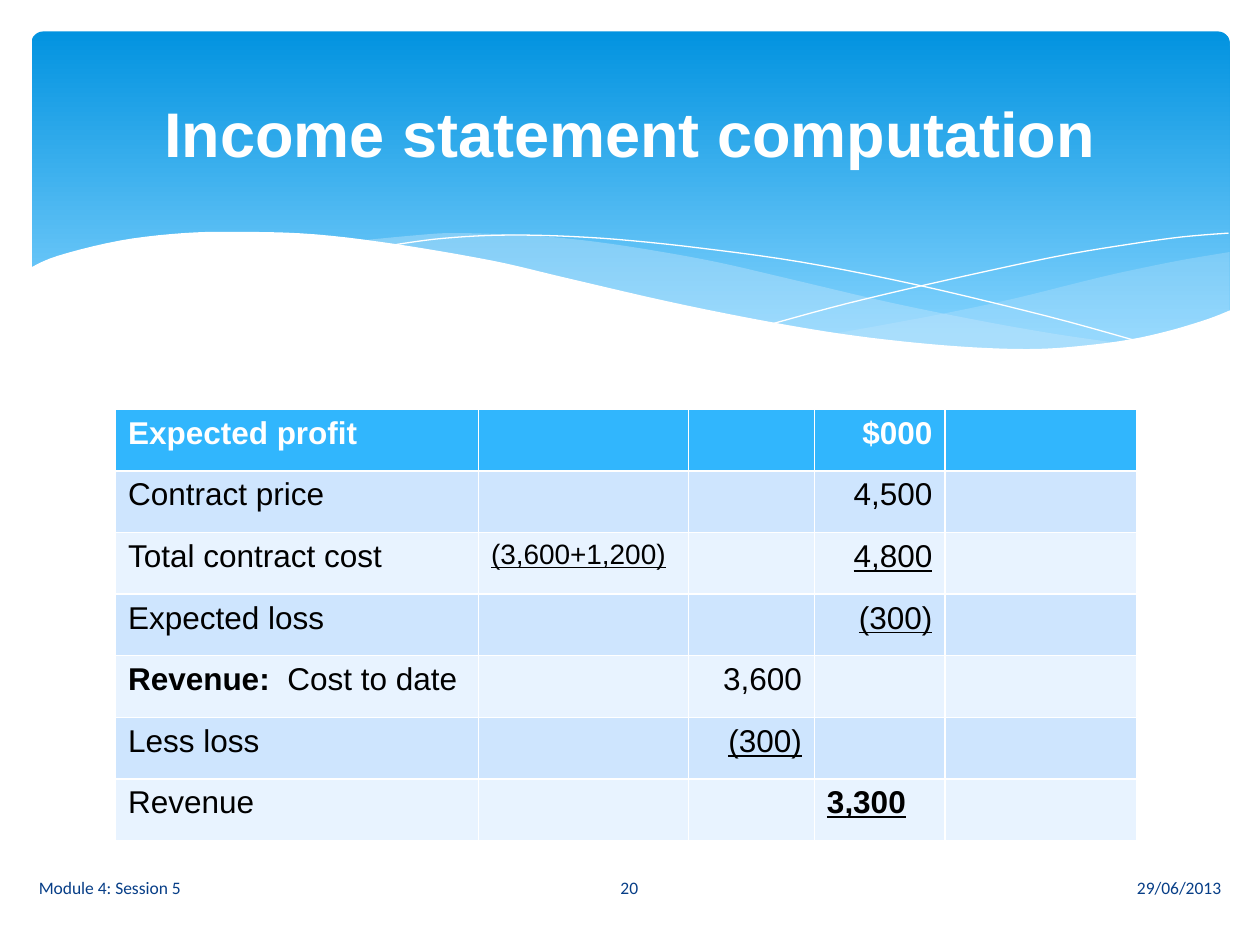
import dataclasses

import lxml.etree
import pptx
import pptx.dml.color
import pptx.enum.dml
import pptx.enum.shapes
import pptx.enum.text
import pptx.oxml.ns
import pptx.util

Pt = pptx.util.Pt
ALIGN = pptx.enum.text.PP_ALIGN


@dataclasses.dataclass(frozen=True)
class Theme:
    white: str = "FFFFFF"
    ink: str = "000000"
    footer: str = "073E87"
    banner_top: str = "0293E0"
    banner_bottom: str = "83D3FE"
    swell: str = "C6E7FC"
    header: str = "31B6FD"
    bands: tuple = ("CEE5FE", "E8F3FF")
    heading_font: str = "Arial"
    footer_font: str = "Calibri"
    title_size: int = 36
    table_size: int = 18
    note_size: int = 16
    footer_size: int = 10


def rgb(value):
    return pptx.dml.color.RGBColor.from_string(value)


def smooth_curve(knots, steps=5):
    padded = [knots[0], *knots, knots[-1]]
    curve = [knots[0]]
    for a, b, c, d in zip(padded, padded[1:], padded[2:], padded[3:]):
        for step in range(1, steps + 1):
            t = step / steps
            curve.append(tuple(
                (2 * q + (r - p) * t + (2 * p - 5 * q + 4 * r - s) * t ** 2
                 + (3 * q - p - 3 * r + s) * t ** 3) / 2
                for p, q, r, s in zip(a, b, c, d)))
    return curve


class SlideWriter:
    def __init__(self, slide, theme):
        self.slide = slide
        self.theme = theme

    def style_run(self, run, size, color, font, bold=False, underline=False):
        run.font.size = Pt(size)
        run.font.color.rgb = rgb(color)
        run.font.name = font
        run.font.bold = bold
        run.font.underline = underline

    def banner(self, left, top, width, height):
        banner = self.slide.shapes.add_shape(
            pptx.enum.shapes.MSO_SHAPE.ROUNDED_RECTANGLE,
            Pt(left), Pt(top), Pt(width), Pt(height))
        banner.adjustments[0] = 0.034
        banner.shadow.inherit = False
        banner.line.fill.background()
        banner.fill.gradient()
        banner.fill.gradient_angle = 270
        top_stop, bottom_stop = banner.fill.gradient_stops
        top_stop.position, bottom_stop.position = 0, 0.9
        top_stop.color.rgb = rgb(self.theme.banner_top)
        bottom_stop.color.rgb = rgb(self.theme.banner_bottom)

    def outline(self, points, closed):
        points = [(Pt(x), Pt(y)) for x, y in points]
        builder = self.slide.shapes.build_freeform(*points[0])
        builder.add_line_segments(points[1:], close=closed)
        shape = builder.convert_to_shape()
        shape.shadow.inherit = False
        return shape

    def wave(self, points, color, opacity=100):
        wave = self.outline(points, True)
        wave.line.fill.background()
        wave.fill.solid()
        wave.fill.fore_color.rgb = rgb(color)
        if opacity < 100:
            tint = wave.fill._xPr.find(".//" + pptx.oxml.ns.qn("a:srgbClr"))
            lxml.etree.SubElement(tint, pptx.oxml.ns.qn("a:alpha"), val=str(opacity * 1000))

    def strand(self, points):
        strand = self.outline(points, False)
        strand.fill.background()
        strand.line.color.rgb = rgb(self.theme.white)
        strand.line.width = Pt(0)

    def text(self, wording, left, top, width, height, align, *style):
        frame = self.slide.shapes.add_textbox(
            Pt(left), Pt(top), Pt(width), Pt(height)).text_frame
        frame.word_wrap = True
        frame.vertical_anchor = pptx.enum.text.MSO_ANCHOR.MIDDLE
        frame.text = wording
        frame.paragraphs[0].alignment = align
        self.style_run(frame.paragraphs[0].runs[0], *style)

    def table(self, left, top, column_widths, row_height, row_count, entries):
        theme = self.theme
        table = self.slide.shapes.add_table(
            row_count, len(column_widths), Pt(left), Pt(top),
            Pt(sum(column_widths)), Pt(row_height * row_count)).table
        for column, width in zip(table.columns, column_widths):
            column.width = Pt(width)
        for row_index, row in enumerate(table.rows):
            row.height = Pt(row_height)
            for cell in row.cells:
                cell.fill.solid()
                cell.fill.fore_color.rgb = rgb(
                    theme.bands[(row_index - 1) % 2] if row_index else theme.header)
        for (row_index, column_index), (parts, align) in entries.items():
            paragraph = table.cell(row_index, column_index).text_frame.paragraphs[0]
            paragraph.alignment = align
            color = theme.ink if row_index else theme.white
            for wording, marks in parts:
                run = paragraph.add_run()
                run.text = wording
                size = theme.note_size if "s" in marks else theme.table_size
                self.style_run(run, size, color, theme.heading_font,
                               "b" in marks, "u" in marks)


RIGHT_SWELL_TOP = [
    (702.7, 144), (673.2, 149), (641.5, 155.5), (619.9, 160.6),
    (579.6, 170.6), (542.2, 178.6), (508.3, 185), (475.9, 190.8)]
RIGHT_SWELL_BOTTOM = [
    (475.9, 190.8), (507.6, 195.1), (536.4, 198), (578.2, 200.2),
    (614.9, 198.7), (645.8, 194.4), (673.2, 188.6), (702.7, 177.8)]
LEFT_SWELL_TOP = [
    (643, 196.6), (602.6, 190.8), (558, 182.9), (508.3, 172.8),
    (452.9, 159.8), (409.7, 149.8), (370.1, 142.6), (334.8, 137.5),
    (302.4, 134.6), (259.9, 133.2), (236.2, 134.6), (205.9, 137.5)]
LEFT_SWELL_BOTTOM = [
    (205.9, 137.5), (246.2, 143.3), (290.9, 151.9), (323.3, 159.8),
    (381.6, 172.8), (432.7, 183.6), (478.8, 191.5), (519.8, 197.3),
    (556.6, 199.4), (589, 200.2), (617, 199.4), (643, 196.6)]
FALLING_STRAND = [
    (222.5, 140.4), (247.7, 136.8), (278.6, 134.6), (311.8, 134.6),
    (352.1, 136.8), (400.3, 141.8), (457.9, 149.8), (523.4, 162.7),
    (598.3, 180.7), (653, 195.8)]
RISING_STRAND = [
    (441.4, 185), (483.8, 173.5), (538.6, 160.6), (601.9, 146.9),
    (644.4, 139.7), (675.4, 135.4), (702, 133.2)]
WHITE_CREST = [
    (16.6, 153.4), (33, 146.2), (68.4, 137.5), (105, 133.2),
    (139, 132.5), (180, 133.9), (227.5, 139.7), (281.5, 149),
    (321.8, 158.4), (380.9, 172.1), (434.2, 182.9), (481, 190.8),
    (522.7, 195.8), (560.2, 198.7), (592.6, 199.4), (621.4, 197.3),
    (647.3, 193.7), (669.6, 188.6), (690.5, 182.2), (703.4, 177.1)]

INCOME_ENTRIES = {
    (0, 0): ([("Expected profit", "b")], ALIGN.LEFT),
    (0, 3): ([("$000", "b")], ALIGN.RIGHT),
    (1, 0): ([("Contract price", "")], ALIGN.LEFT),
    (1, 3): ([("4,500", "")], ALIGN.RIGHT),
    (2, 0): ([("Total contract cost", "")], ALIGN.LEFT),
    (2, 1): ([("(3,600+1,200)", "su")], ALIGN.LEFT),
    (2, 3): ([("4,800", "u")], ALIGN.RIGHT),
    (3, 0): ([("Expected loss", "")], ALIGN.LEFT),
    (3, 3): ([("(300)", "u")], ALIGN.RIGHT),
    (4, 0): ([("Revenue:", "b"), ("  Cost to date", "")], ALIGN.LEFT),
    (4, 2): ([("3,600", "")], ALIGN.RIGHT),
    (5, 0): ([("Less loss", "")], ALIGN.LEFT),
    (5, 2): ([("(300)", "u")], ALIGN.RIGHT),
    (6, 0): ([("Revenue", "")], ALIGN.LEFT),
    (6, 3): ([("3,300", "bu")], ALIGN.LEFT),
}


def main():
    deck = pptx.Presentation()
    deck.slide_width, deck.slide_height = Pt(720), Pt(540)
    theme = Theme()
    writer = SlideWriter(deck.slides.add_slide(deck.slide_layouts[6]), theme)

    writer.banner(18, 18, 684.7, 194.4)
    for top, bottom, opacity in ((RIGHT_SWELL_TOP, RIGHT_SWELL_BOTTOM, 29),
                                 (LEFT_SWELL_TOP, LEFT_SWELL_BOTTOM, 40)):
        writer.wave(smooth_curve(top) + smooth_curve(bottom), theme.swell, opacity)
    for strand in (FALLING_STRAND, RISING_STRAND):
        writer.strand(smooth_curve(strand))
    writer.wave(smooth_curve(WHITE_CREST) + [(703.4, 236.9), (16.6, 236.9)], theme.white)

    writer.table(66, 234, (207.4, 120, 72, 74.6, 109.4), 35.2, 7, INCOME_ENTRIES)

    for wording, left, width, align in (
            ("29/06/2013", 406.8, 298, ALIGN.RIGHT),
            ("Module 4: Session 5", 15.1, 298, ALIGN.LEFT),
            ("20", 313.9, 91.4, ALIGN.CENTER)):
        writer.text(wording, left, 492.5, width, 28.8, align,
                    theme.footer_size, theme.footer, theme.footer_font)
    writer.text("Income statement computation", 36, 26.6, 648, 98.6, ALIGN.CENTER,
                theme.title_size, theme.white, theme.heading_font, True)
    deck.save("out.pptx")


if __name__ == "__main__":
    main()
